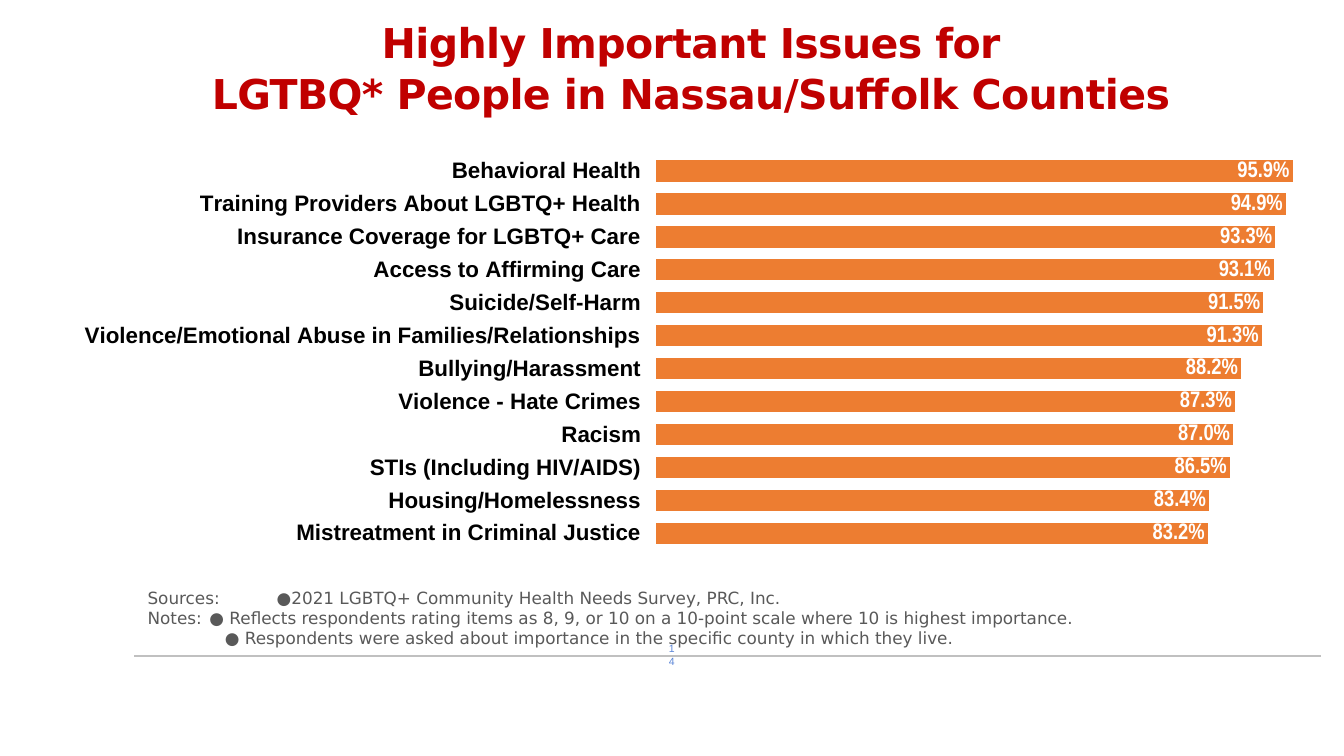
from lxml import etree
from pptx import Presentation
from pptx import util as u
from pptx.chart.data import CategoryChartData
from pptx.dml.color import RGBColor
from pptx.enum import chart as charts, shapes, text
from pptx.oxml import parse_xml
from pptx.oxml.ns import nsdecls, qn

COLORS = {
    "title": "C00000", "bar": "ED7D31", "white": "FFFFFF", "black": "000000",
    "note": "595959", "rule": "C0C0C0", "number": "5A85D7",
}
TITLE = ["Highly Important Issues for", "LGTBQ* People in Nassau/Suffolk Counties"]
ISSUES = [
    ("Behavioral Health", 95.9),
    ("Training Providers About LGBTQ+ Health", 94.9),
    ("Insurance Coverage for LGBTQ+ Care", 93.3),
    ("Access to Affirming Care", 93.1),
    ("Suicide/Self-Harm", 91.5),
    ("Violence/Emotional Abuse in Families/Relationships", 91.3),
    ("Bullying/Harassment", 88.2),
    ("Violence - Hate Crimes", 87.3),
    ("Racism", 87.0),
    ("STIs (Including HIV/AIDS)", 86.5),
    ("Housing/Homelessness", 83.4),
    ("Mistreatment in Criminal Justice", 83.2),
]
NOTES = [
    "Sources:\t●2021 LGBTQ+ Community Health Needs Survey, PRC, Inc.",
    "Notes:\t● Reflects respondents rating items as 8, 9, or 10 on a 10-point scale where 10 is highest importance.",
    "● Respondents were asked about importance in the specific county in which they live.",
]
NOTE_INDENTS = [(1.17, -1.17), (1.17, -1.17), (1.46, 0)]
PLOT = {"x": 0.486, "y": 0, "w": 0.514, "h": 0.998}


def color(name):
    return RGBColor.from_string(COLORS[name])


def set_font(font, name, size, tint, bold=False):
    font.name, font.size, font.bold = name, u.Pt(size), bold
    font.color.rgb = color(tint)


def add_text(page, lines, place, font, size, tint, bold=False, align=text.PP_ALIGN.LEFT,
             anchor=text.MSO_ANCHOR.TOP, insets=(0, 0, 0, 0), indents=None, spacing=None,
             tracking=None):
    frame = page.shapes.add_textbox(*map(u.Cm, place)).text_frame
    frame.word_wrap = True
    frame.vertical_anchor = anchor
    (frame.margin_left, frame.margin_top,
     frame.margin_right, frame.margin_bottom) = map(u.Cm, insets)
    for index, line in enumerate(lines):
        para = frame.paragraphs[0] if index == 0 else frame.add_paragraph()
        para.alignment = align
        if spacing:
            para.line_spacing = spacing
        if indents:
            left, first = indents[index]
            properties = para._p.get_or_add_pPr()
            properties.set("marL", str(u.Cm(left)))
            properties.set("indent", str(u.Cm(first)))
        span = para.add_run()
        span.text = line
        set_font(span.font, font, size, tint, bold)
        if tracking:
            span._r.get_or_add_rPr().set("spc", str(round(tracking * 100)))


def add_rule(page, left, right, top):
    rule = page.shapes.add_connector(
        shapes.MSO_CONNECTOR.STRAIGHT, u.Cm(left), u.Cm(top), u.Cm(right), u.Cm(top))
    rule.line.color.rgb = color("rule")
    rule.line.width = u.Pt(1)
    etree.SubElement(rule._element.spPr, qn("a:effectLst"))


def set_plot_layout(chart):
    area = chart._chartSpace.chart.plotArea
    for old in area.findall(qn("c:layout")):
        area.remove(old)
    sizes = "".join(f'<c:{key} val="{value}"/>' for key, value in PLOT.items())
    area.insert(0, parse_xml(
        f'<c:layout {nsdecls("c")}><c:manualLayout><c:layoutTarget val="inner"/>'
        f'<c:xMode val="edge"/><c:yMode val="edge"/>{sizes}</c:manualLayout></c:layout>'))


def add_issue_chart(page, place):
    data = CategoryChartData(number_format="0.0")
    data.categories = [name for name, _ in ISSUES]
    data.add_series("Series 1", [value for _, value in ISSUES])
    chart = page.shapes.add_chart(
        charts.XL_CHART_TYPE.BAR_CLUSTERED, *map(u.Cm, place), data).chart
    chart.has_legend = chart.has_title = False
    set_font(chart.font, "Arial Narrow", 12, "black", True)

    issues = chart.category_axis
    issues.reverse_order = True
    issues.format.line.fill.background()
    set_font(issues.tick_labels.font, "Arial", 12, "black", True)
    scale = chart.value_axis
    scale.minimum_scale, scale.maximum_scale = 0, 100
    scale.has_major_gridlines = scale.visible = False

    plot = chart.plots[0]
    plot.gap_width = 29
    plot.vary_by_categories = False
    bars = plot.series[0]
    bars.format.fill.solid()
    bars.format.fill.fore_color.rgb = color("bar")
    bars.format.line.color.rgb = color("white")
    bars.format.line.width = u.Pt(2.25)
    labels = bars.data_labels
    labels.show_value = True
    labels.position = charts.XL_LABEL_POSITION.INSIDE_END
    labels.number_format = '0.0"%"'
    labels.number_format_is_linked = False
    set_font(labels.font, "Arial Narrow", 12, "white", True)
    set_plot_layout(chart)


def main():
    deck = Presentation()
    deck.slide_width, deck.slide_height = u.Cm(25.4), u.Cm(14.29)
    page = deck.slides.add_slide(deck.slide_layouts[6])
    add_rule(page, 2.54, 24.97, 12.4)
    add_text(page, TITLE, (1.63, 0.79, 22.86, 2.31), "DejaVu Sans", 22, "title", bold=True,
             align=text.PP_ALIGN.CENTER, anchor=text.MSO_ANCHOR.BOTTOM,
             insets=(0, 0, 0, 0.87), spacing=1.05, tracking=-0.3)
    add_issue_chart(page, (0.43, 2.92, 24.56, 7.49))
    add_text(page, NOTES, (2.79, 11.1, 20.52, 0.91), "DejaVu Sans", 9, "note",
             indents=NOTE_INDENTS)
    add_text(page, ["14"], (12.34, 12.01, 0.71, 0.48), "Arial", 5.6, "number",
             align=text.PP_ALIGN.CENTER, insets=(0.25, 0.13, 0.25, 0.13))
    deck.save("out.pptx")


if __name__ == "__main__":
    main()
